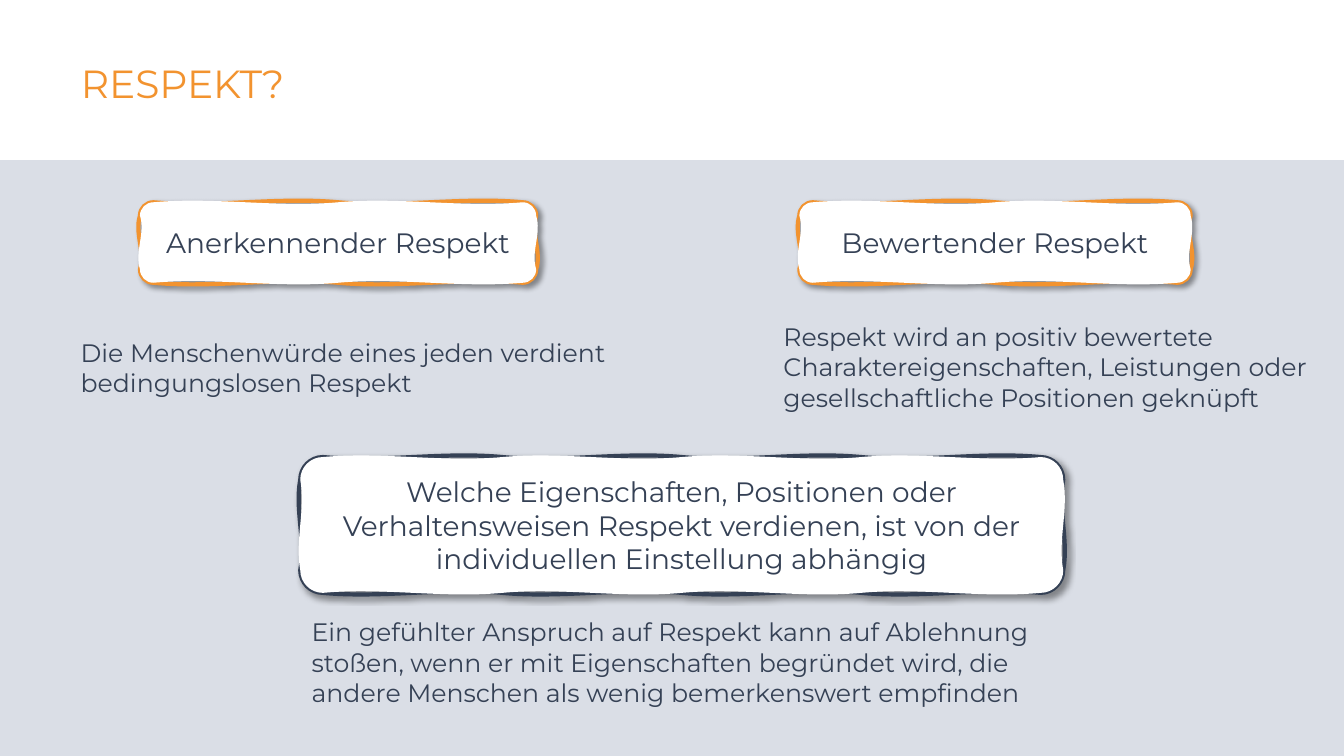
from lxml.etree import SubElement
from pptx import Presentation
from pptx.dml.color import RGBColor
from pptx.enum.shapes import MSO_SHAPE
from pptx.enum.text import MSO_ANCHOR, MSO_AUTO_SIZE, PP_ALIGN
from pptx.oxml.ns import qn
from pptx.util import Pt

WHITE = RGBColor(0xFF, 0xFF, 0xFF)
GREY = RGBColor(0xDA, 0xDE, 0xE6)
ORANGE = RGBColor(0xF2, 0x93, 0x2F)
NAVY = RGBColor(0x35, 0x41, 0x55)
FONT = "Montserrat"

TITLE = "RESPEKT?"
CARDS = [
    ("Bewertender Respekt", (571, 144.5, 279.5, 57.5), ORANGE),
    ("Welche Eigenschaften, Positionen oder Verhaltensweisen Respekt verdienen, "
     "ist von der individuellen Einstellung abhängig",
     (214.5, 326.5, 545, 97), NAVY),
    ("Anerkennender Respekt", (100, 144.5, 283, 57.5), ORANGE),
]
NOTES = [
    ("Die Menschenwürde eines jeden verdient bedingungslosen Respekt",
     (14.5, 237.5, 480, 51), 1),
    ("Respekt wird an positiv bewertete Charaktereigenschaften, Leistungen oder "
     "gesellschaftliche Positionen geknüpft", (552.5, 226, 480, 72.5), 0),
    ("Ein gefühlter Anspruch auf Respekt kann auf Ablehnung stoßen, wenn er mit "
     "Eigenschaften begründet wird, die andere Menschen als wenig bemerkenswert "
     "empfinden", (179.5, 437, 596, 72.5), 1),
]


def style(para, size, color):
    para.font.name = FONT
    para.font.size = Pt(size)
    para.font.color.rgb = color


def add_step(path, kind, points):
    step = SubElement(path, qn(kind))
    for x, y in points:
        SubElement(step, qn("a:pt"), x=str(Pt(x)), y=str(Pt(y)))


def draw_edge(path, width, height, bump):
    rad = height / 6
    sides = [
        ((rad, 0), (1, 0), width),
        ((width, rad), (0, 1), height),
        ((width - rad, height), (-1, 0), width),
        ((0, height - rad), (0, -1), height),
    ]
    add_step(path, "a:moveTo", [sides[0][0]])
    for (x, y), (dx, dy), span in sides:
        run = span - 2 * rad
        waves = max(1, round(run / 120))
        part = run / waves
        for _ in range(waves):
            curve = [(x + dx * part * t - dy * s, y + dy * part * t + dx * s)
                     for t, s in ((1 / 3, bump), (2 / 3, -bump), (1, 0))]
            add_step(path, "a:cubicBezTo", curve)
            x, y = curve[-1]
        bend = [(x + rad * (dx * a - dy * b), y + rad * (dy * a + dx * b))
                for a, b in ((0.55, 0), (1, 0.45), (1, 1))]
        add_step(path, "a:cubicBezTo", bend)
    SubElement(path, qn("a:close"))


def sketch(shapes, box):
    left, top, width, height = box
    right, low = left + width, top + height
    pen = shapes.build_freeform(Pt(left), Pt(top))
    pen.add_line_segments([(Pt(right), Pt(top)), (Pt(right), Pt(low)),
                           (Pt(left), Pt(low))], close=True)
    card = pen.convert_to_shape()
    paths = next(card._element.iter(qn("a:pathLst")))
    paths.remove(paths[0])
    for flag, value, bump in (("fill", "none", 4), ("stroke", "0", -4)):
        path = SubElement(paths, qn("a:path"), w=str(Pt(width)), h=str(Pt(height)))
        path.set(flag, value)
        draw_edge(path, width, height, bump)
    return card


def shade(shape):
    effects = SubElement(shape._element.spPr, qn("a:effectLst"))
    drop = SubElement(effects, qn("a:outerShdw"), blurRad=str(Pt(4)),
                      dist=str(Pt(3)), dir="2700000", algn="tl", rotWithShape="0")
    black = SubElement(drop, qn("a:srgbClr"), val="000000")
    SubElement(black, qn("a:alpha"), val="40000")


def add_card(shapes, text, box, color):
    card = sketch(shapes, box)
    card.fill.solid()
    card.fill.fore_color.rgb = WHITE
    card.line.color.rgb = color
    card.line.width = Pt(3)
    shade(card)
    frame = card.text_frame
    frame.word_wrap = True
    frame.vertical_anchor = MSO_ANCHOR.MIDDLE
    para = frame.paragraphs[0]
    para.text = text
    para.alignment = PP_ALIGN.CENTER
    style(para, 20, NAVY)


def add_note(shapes, text, box, level):
    frame = shapes.add_textbox(*map(Pt, box)).text_frame
    frame.word_wrap = True
    frame.auto_size = MSO_AUTO_SIZE.SHAPE_TO_FIT_TEXT
    para = frame.paragraphs[0]
    para.text = text
    para.level = level
    style(para, 18, NAVY)


def main():
    deck = Presentation()
    deck.slide_width, deck.slide_height = Pt(960), Pt(540)
    slide = deck.slides.add_slide(deck.slide_layouts[5])
    shapes = slide.shapes
    slide.background.fill.solid()
    slide.background.fill.fore_color.rgb = GREY

    band = shapes.add_shape(MSO_SHAPE.RECTANGLE, 0, 0, Pt(960), Pt(114))
    band.shadow.inherit = False
    band.fill.solid()
    band.fill.fore_color.rgb = WHITE
    band.line.color.rgb = WHITE
    band.line.width = Pt(1)
    shapes.title._element.addprevious(band._element)

    title = shapes.title
    title.left, title.top, title.width, title.height = map(Pt, (50.5, 43, 620.5, 37))
    frame = title.text_frame
    frame.auto_size = MSO_AUTO_SIZE.NONE
    frame.vertical_anchor = MSO_ANCHOR.MIDDLE
    para = frame.paragraphs[0]
    para.text = TITLE
    para.alignment = PP_ALIGN.LEFT
    para.line_spacing = 0.9
    style(para, 28, ORANGE)

    for card in CARDS:
        add_card(shapes, *card)
    for note in NOTES:
        add_note(shapes, *note)
    deck.save("out.pptx")


if __name__ == "__main__":
    main()
